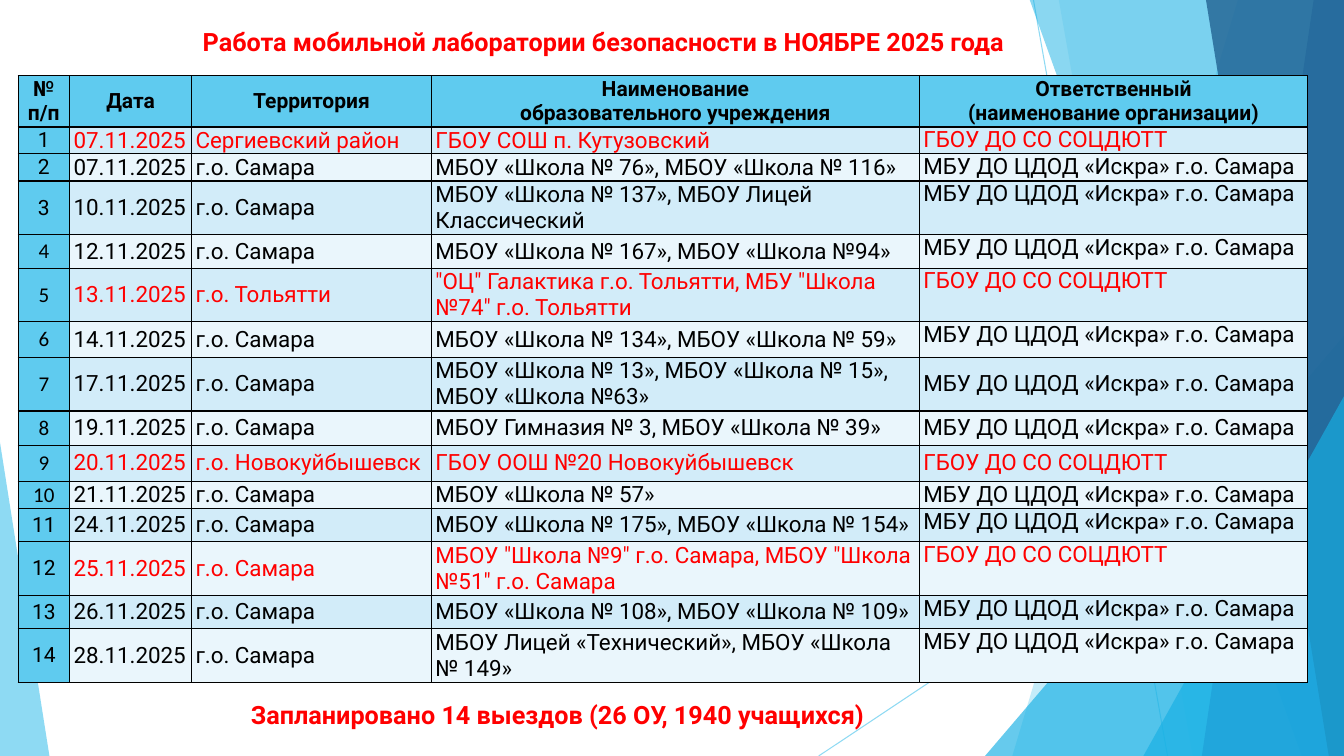
"""Build the November 2025 schedule slide of the mobile safety laboratory."""
from dataclasses import dataclass

from lxml.etree import SubElement
from pptx import Presentation
from pptx.dml.color import RGBColor
from pptx.enum.shapes import MSO_CONNECTOR as Connector, MSO_SHAPE as Shape
from pptx.enum.text import MSO_ANCHOR as Anchor, MSO_AUTO_SIZE as AutoSize, PP_ALIGN as Align
from pptx.oxml.ns import qn
from pptx.util import Inches, Pt


@dataclass(frozen=True)
class Theme:
    font: str = "Roboto"
    number_font: str = "Calibri"
    red: str = "FF0000"
    black: str = "000000"
    sky: str = "5FCBEF"
    cyan: str = "17B0E4"
    blue: str = "2E83C3"
    navy: str = "226292"
    odd_band: str = "D2ECF9"
    even_band: str = "EAF6FC"
    caption_size: float = 18
    body_size: float = 16
    label_size: float = 15
    space_before: float = 14


@dataclass(frozen=True)
class Ray:
    start: tuple[float, float]
    end: tuple[float, float]


@dataclass(frozen=True)
class Facet:
    points: tuple[tuple[float, float], ...]
    color: str
    opacity: int


@dataclass(frozen=True)
class Wedge:
    box: tuple[float, float, float, float]
    apex: float
    color: str
    opacity: int


@dataclass(frozen=True)
class Visit:
    date: str
    territory: str
    schools: str
    host: str


THEME = Theme()
WIDTH, HEIGHT, TOP = 13.33, 7.5, -0.01
CITY = "г.о. Самара"
CENTER = "ГБОУ ДО СО СОЦДЮТТ"
SPARK = "МБУ ДО ЦДОД «Искра» г.о. Самара"


def facet(top_x: float, bottom_x: float, color: str, opacity: int) -> Facet:
    """Describe a panel between a slanted left edge and the right slide edge."""
    return Facet(((top_x, TOP), (WIDTH, TOP), (WIDTH, HEIGHT), (bottom_x, HEIGHT)), color, opacity)


DECOR = (
    Ray((10.25, 0), (11.58, HEIGHT)),
    Ray((WIDTH, 4.03), (8.12, HEIGHT)),
    facet(12.28, 10.04, THEME.sky, 36),
    facet(10.5, 11.83, THEME.sky, 20),
    Wedge((9.77, 3.33, 3.56, 4.17), 1, THEME.cyan, 66),
    facet(10.21, 12.91, THEME.cyan, 50),
    facet(13.03, 11.92, THEME.blue, 70),
    facet(11.96, 13.18, THEME.navy, 80),
    Wedge((11.34, 3.93, 1.99, 3.57), 1, THEME.cyan, 66),
    Wedge((0, 4.39, 0.49, 3.11), 0, THEME.sky, 70),
)
HEADERS = (
    ("№", "п/п"),
    ("Дата",),
    ("Территория",),
    ("Наименование", "образовательного учреждения"),
    ("Ответственный", "(наименование организации)"),
)
VISITS = (
    Visit("07.11.2025", "Сергиевский район", "ГБОУ СОШ п. Кутузовский", CENTER),
    Visit("07.11.2025", CITY, "МБОУ «Школа № 76», МБОУ «Школа № 116»", SPARK),
    Visit("10.11.2025", CITY, "МБОУ «Школа № 137», МБОУ Лицей Классический", SPARK),
    Visit("12.11.2025", CITY, "МБОУ «Школа № 167», МБОУ «Школа №94»", SPARK),
    Visit("13.11.2025", "г.о. Тольятти",
          '"ОЦ" Галактика г.о. Тольятти, МБУ "Школа №74" г.о. Тольятти', CENTER),
    Visit("14.11.2025", CITY, "МБОУ «Школа № 134», МБОУ «Школа № 59»", SPARK),
    Visit("17.11.2025", CITY, "МБОУ «Школа № 13», МБОУ «Школа № 15», МБОУ «Школа №63»", SPARK),
    Visit("19.11.2025", CITY, "МБОУ Гимназия № 3, МБОУ «Школа № 39»", SPARK),
    Visit("20.11.2025", "г.о. Новокуйбышевск", "ГБОУ ООШ №20 Новокуйбышевск", CENTER),
    Visit("21.11.2025", CITY, "МБОУ «Школа № 57»", SPARK),
    Visit("24.11.2025", CITY, "МБОУ «Школа № 175», МБОУ «Школа № 154»", SPARK),
    Visit("25.11.2025", CITY, 'МБОУ "Школа №9" г.о. Самара, МБОУ "Школа №51" г.о. Самара', CENTER),
    Visit("26.11.2025", CITY, "МБОУ «Школа № 108», МБОУ «Школа № 109»", SPARK),
    Visit("28.11.2025", CITY, "МБОУ Лицей «Технический», МБОУ «Школа № 149»", SPARK),
)
COLUMN_WIDTHS = (0.51, 1.21, 2.38, 4.84, 3.85)
ROW_HEIGHTS = (0.51, 0.24, 0.27, 0.33, 0.33, 0.33, 0.35, 0.35, 0.34, 0.36, 0.24, 0.33, 0.33, 0.33, 0.24)
CENTERED_HOSTS = range(7, 10)
CALIBRI_NUMBERS = range(4, 11)


def set_opacity(shape, percent: int) -> None:
    """Make the first explicit colour of a shape translucent."""
    color = next(shape._element.iter(qn("a:srgbClr")))
    SubElement(color, qn("a:alpha")).set("val", str(percent * 1000))


def draw_ray(slide, ray: Ray) -> None:
    """Draw one thin decorative line."""
    line = slide.shapes.add_connector(Connector.STRAIGHT, *map(Inches, ray.start + ray.end))
    line.line.width = Pt(0.75)
    line.line.color.rgb = RGBColor.from_string(THEME.sky)
    SubElement(line._element.spPr, qn("a:effectLst"))
    set_opacity(line, 70)


def draw_panel(slide, panel: Facet | Wedge) -> None:
    """Draw one translucent panel or triangle."""
    if isinstance(panel, Wedge):
        shape = slide.shapes.add_shape(Shape.ISOSCELES_TRIANGLE, *map(Inches, panel.box))
        shape.adjustments[0] = panel.apex
    else:
        first, *rest = [(Inches(x), Inches(y)) for x, y in panel.points]
        builder = slide.shapes.build_freeform(*first)
        builder.add_line_segments(rest)
        shape = builder.convert_to_shape()
    shape.shadow.inherit = False
    shape.fill.solid()
    shape.fill.fore_color.rgb = RGBColor.from_string(panel.color)
    shape.line.fill.background()
    set_opacity(shape, panel.opacity)


def add_run(paragraph, text: str, size: float, color: str, bold: bool = False, font: str = THEME.font) -> None:
    """Add one formatted run to a paragraph."""
    run = paragraph.add_run()
    run.text = text
    run.font.name = font
    run.font.size = Pt(size)
    run.font.bold = bold
    run.font.color.rgb = RGBColor.from_string(color)


def write_caption(shape, text: str, box: tuple[float, float, float, float]) -> None:
    """Place a red centred caption."""
    shape.left, shape.top, shape.width, shape.height = map(Inches, box)
    frame = shape.text_frame
    frame.word_wrap = True
    frame.auto_size = AutoSize.SHAPE_TO_FIT_TEXT
    frame.vertical_anchor = Anchor.TOP
    paragraph = frame.paragraphs[0]
    paragraph.alignment = Align.CENTER
    paragraph.line_spacing = 1.07
    add_run(paragraph, text, THEME.caption_size, THEME.red, bold=True)


def format_cell(cell, fill: str, anchor: Anchor = Anchor.MIDDLE) -> None:
    """Set the borders, fill, margins and anchor of a cell."""
    properties = cell._tc.get_or_add_tcPr()
    for side in ("lnL", "lnR", "lnT", "lnB"):
        border = SubElement(properties, qn(f"a:{side}"), w=str(Pt(1)))
        SubElement(SubElement(border, qn("a:solidFill")), qn("a:srgbClr"), val=THEME.black)
    cell.fill.solid()
    cell.fill.fore_color.rgb = RGBColor.from_string(fill)
    cell.margin_left = cell.margin_right = Inches(0.04)
    cell.margin_top = cell.margin_bottom = 0
    cell.vertical_anchor = anchor


def fill_visit(table, number: int, visit: Visit) -> None:
    """Write one numbered visit into its table row."""
    color = THEME.red if visit.host == CENTER else THEME.black
    band = THEME.odd_band if number % 2 else THEME.even_band
    texts = (str(number), visit.date, visit.territory, visit.schools, visit.host)
    for column, text in enumerate(texts):
        cell = table.cell(number, column)
        top = column == 4 and number not in CENTERED_HOSTS
        format_cell(cell, band if column else THEME.sky, Anchor.TOP if top else Anchor.MIDDLE)
        paragraph = cell.text_frame.paragraphs[0]
        paragraph.space_before = Pt(THEME.space_before)
        if column:
            add_run(paragraph, text, THEME.body_size, color)
        else:
            paragraph.alignment = Align.CENTER
            font = THEME.number_font if number in CALIBRI_NUMBERS else THEME.font
            add_run(paragraph, text, THEME.label_size, THEME.black, font=font)


def draw_schedule(slide) -> None:
    """Draw the table of visits."""
    box = map(Inches, (0.18, 0.75, sum(COLUMN_WIDTHS), sum(ROW_HEIGHTS)))
    table = slide.shapes.add_table(len(ROW_HEIGHTS), len(COLUMN_WIDTHS), *box).table
    table.first_row = table.horz_banding = False
    for column, width in zip(table.columns, COLUMN_WIDTHS):
        column.width = Inches(width)
    for row, height in zip(table.rows, ROW_HEIGHTS):
        row.height = Inches(height)
    for column, lines in enumerate(HEADERS):
        cell = table.cell(0, column)
        format_cell(cell, THEME.sky)
        for index, line in enumerate(lines):
            frame = cell.text_frame
            paragraph = frame.add_paragraph() if index else frame.paragraphs[0]
            paragraph.alignment = Align.CENTER
            add_run(paragraph, line, THEME.label_size, THEME.black, bold=True)
    for number, visit in enumerate(VISITS, 1):
        fill_visit(table, number, visit)


def main() -> None:
    """Build and save the presentation."""
    presentation = Presentation()
    presentation.slide_width, presentation.slide_height = Inches(WIDTH), Inches(HEIGHT)
    slide = presentation.slides.add_slide(presentation.slide_layouts.get_by_name("Title Only"))
    for item in DECOR:
        if isinstance(item, Ray):
            draw_ray(slide, item)
        else:
            draw_panel(slide, item)
    write_caption(slide.shapes.title, "Работа мобильной лаборатории безопасности в НОЯБРЕ 2025 года",
                  (0.27, 0.19, 11.43, 0.4))
    draw_schedule(slide)
    summary_box = (0.51, 6.87, 10.04, 0.43)
    write_caption(slide.shapes.add_textbox(*map(Inches, summary_box)),
                  "Запланировано 14 выездов (26 ОУ, 1940 учащихся)", summary_box)
    presentation.save("out.pptx")


if __name__ == "__main__":
    main()
